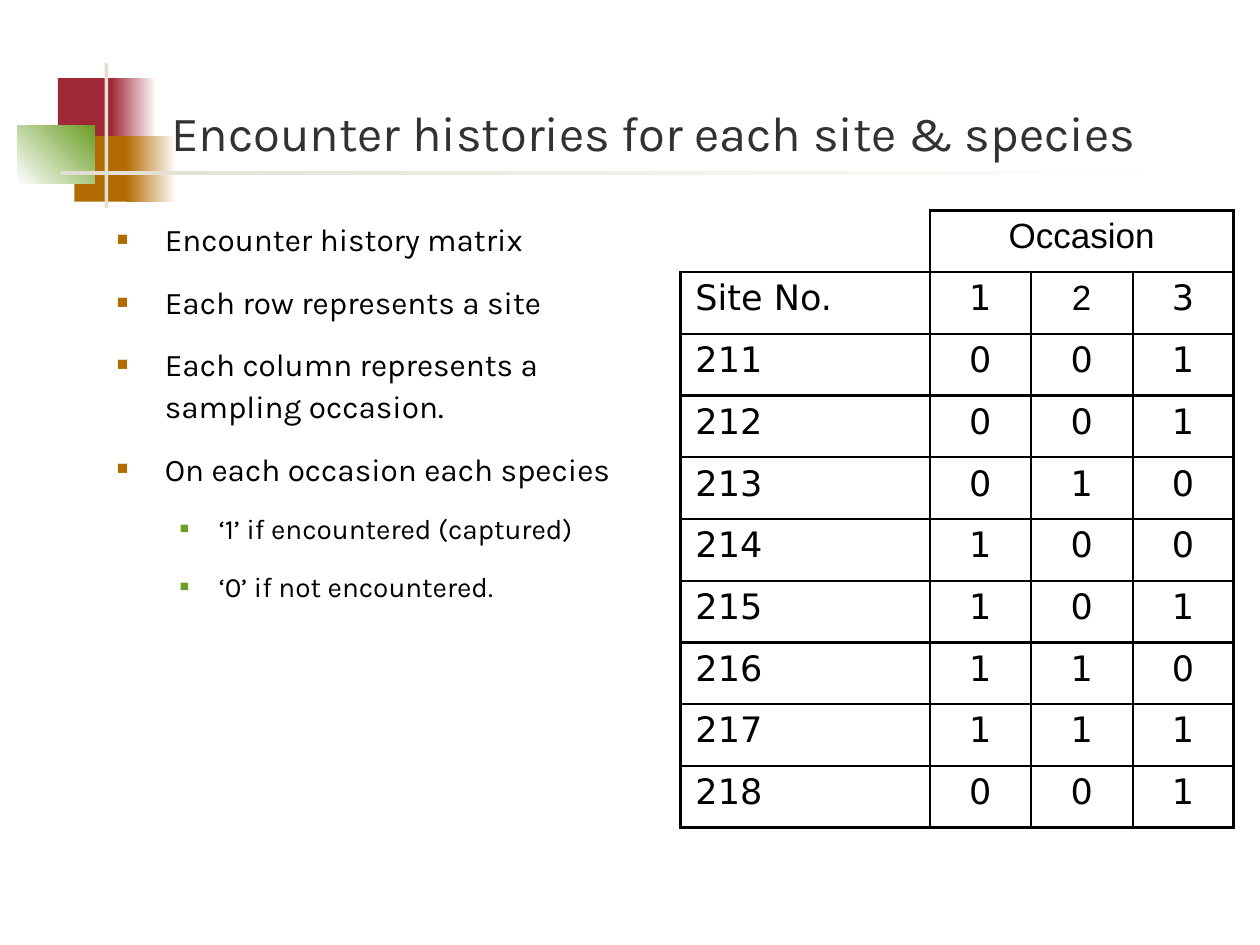
from lxml.etree import SubElement
from pptx import Presentation
from pptx.dml.color import RGBColor
from pptx.enum.shapes import MSO_SHAPE
from pptx.enum.text import MSO_ANCHOR, PP_ALIGN
from pptx.oxml.ns import qn
from pptx.util import Inches, Pt

RED, ORANGE, GREEN, BEIGE = "9F2936", "B26B02", "6B9F25", "E3DED1"
BLACK, WHITE, GREY = "000000", "FFFFFF", "323232"
BODY_FONT, TABLE_FONT, HEAD_FONT = "Karla", "DejaVu Sans", "Arial"

# left, top, width, height, colours (two make a gradient), gradient angle
DECORATION = [
    (0.46, 0.62, 0.48, 0.52, [RED], 0),
    (0.88, 0.62, 0.36, 0.52, [RED, WHITE], 0),
    (0.59, 1.08, 0.46, 0.52, [ORANGE], 0),
    (1, 1.08, 0.4, 0.52, [ORANGE, WHITE], 0),
    (0.14, 1, 0.61, 0.46, [WHITE, GREEN], 45),
    (0.83, 0.5, 0.03, 1.15, [BEIGE], 0),
    (0.48, 1.36, 9, 0.03, [BEIGE, WHITE], 0),
]
BULLETS = [
    (0, "Encounter history matrix"),
    (0, "Each row represents a site"),
    (0, "Each column represents a sampling occasion."),
    (0, "On each occasion each species"),
    (1, "‘1’ if encountered (captured)"),
    (1, "‘0’ if not encountered."),
]
# per level: text size, left margin, hanging indent, bullet colour, bullet percent
LEVELS = [(18, 0.38, 0.38, ORANGE, 60), (16, 0.81, 0.31, GREEN, 55)]
HISTORIES = {211: "001", 212: "001", 213: "010", 214: "100",
             215: "101", 216: "110", 217: "111", 218: "001"}
COL_WIDTHS = [1.98, 0.8, 0.81, 0.8]
ROW_HEIGHT = 0.49


def rgb(color):
    return RGBColor.from_string(color)


def write(p, text, size=20, font=TABLE_FONT, color=BLACK, align=None):
    r = p.add_run()
    r.text = text
    r.font.size, r.font.name = Pt(size), font
    r.font.color.rgb = rgb(color)
    p.alignment = align


def add_block(s, left, top, width, height, colors, angle):
    sp = s.shapes.add_shape(MSO_SHAPE.RECTANGLE, Inches(left), Inches(top),
                            Inches(width), Inches(height))
    sp.shadow.inherit = False
    sp.line.fill.background()
    if len(colors) == 1:
        sp.fill.solid()
        sp.fill.fore_color.rgb = rgb(colors[0])
    else:
        sp.fill.gradient()
        sp.fill.gradient_angle = angle
        for stop, color in zip(sp.fill.gradient_stops, colors):
            stop.color.rgb = rgb(color)


def add_text_frame(s, left, top, width, height, anchor=MSO_ANCHOR.TOP):
    tf = s.shapes.add_textbox(Inches(left), Inches(top),
                              Inches(width), Inches(height)).text_frame
    tf.word_wrap = True
    tf.vertical_anchor = anchor
    return tf


def set_bullet(p, margin, hang, color, percent):
    pPr = p._p.get_or_add_pPr()
    pPr.set("marL", str(Inches(margin)))
    pPr.set("indent", str(-Inches(hang)))
    SubElement(SubElement(pPr, qn("a:buClr")), qn("a:srgbClr"), val=color)
    SubElement(pPr, qn("a:buSzPct"), val=str(percent * 1000))
    SubElement(pPr, qn("a:buFont"), typeface="Arial")
    SubElement(pPr, qn("a:buChar"), char="■")


def add_bullets(s):
    tf = add_text_frame(s, 0.83, 1.67, 4.4, 5.04)
    for i, (level, text) in enumerate(BULLETS):
        p = tf.add_paragraph() if i else tf.paragraphs[0]
        size, *bullet = LEVELS[level]
        p.level = level
        p.line_spacing, p.space_before = 1.1, Pt(12)
        write(p, text, size=size, font=BODY_FONT)
        set_bullet(p, *bullet)


def set_borders(cell, sides):
    """Draw the named sides (of L, R, T, B) and clear the others."""
    tcPr = cell._tc.get_or_add_tcPr()
    for side in "LRTB":
        ln = SubElement(tcPr, qn(f"a:ln{side}"), w=str(Pt(1.5)))
        if side in sides:
            fill = SubElement(ln, qn("a:solidFill"))
            SubElement(fill, qn("a:srgbClr"), val=BLACK)
        else:
            SubElement(ln, qn("a:noFill"))


def add_history_table(s):
    rows = [["", "Occasion", "", ""], ["Site No.", "1", "2", "3"]]
    rows += [[str(site), *history] for site, history in HISTORIES.items()]
    table = s.shapes.add_table(len(rows), len(COL_WIDTHS), Inches(5.4), Inches(1.67),
                               Inches(sum(COL_WIDTHS)),
                               Inches(ROW_HEIGHT * len(rows))).table
    table.first_row = table.horz_banding = False
    for column, width in zip(table.columns, COL_WIDTHS):
        column.width = Inches(width)
    table.cell(0, 1).merge(table.cell(0, 3))
    for i, row in enumerate(rows):
        table.rows[i].height = Inches(ROW_HEIGHT)
        for j, text in enumerate(row):
            cell = table.cell(i, j)
            cell.margin_left = cell.margin_right = Inches(0.12)
            set_borders(cell, "RB" if i == j == 0 else "LRTB")
            cell.fill.background()
            if text:
                write(cell.text_frame.paragraphs[0], text,
                      font=HEAD_FONT if text == "Occasion" or (i, j) == (1, 2) else TABLE_FONT,
                      align=PP_ALIGN.CENTER if j else PP_ALIGN.LEFT)


def main():
    prs = Presentation()
    prs.slide_width, prs.slide_height = Inches(10), Inches(7.5)
    s = prs.slides.add_slide(prs.slide_layouts[6])
    for block in DECORATION:
        add_block(s, *block)
    title = add_text_frame(s, 1.26, 0.23, 8.52, 1.1, anchor=MSO_ANCHOR.BOTTOM)
    write(title.paragraphs[0], "Encounter histories for each site & species",
          size=28, font=BODY_FONT, color=GREY)
    add_bullets(s)
    add_history_table(s)
    prs.save("out.pptx")


if __name__ == "__main__":
    main()
